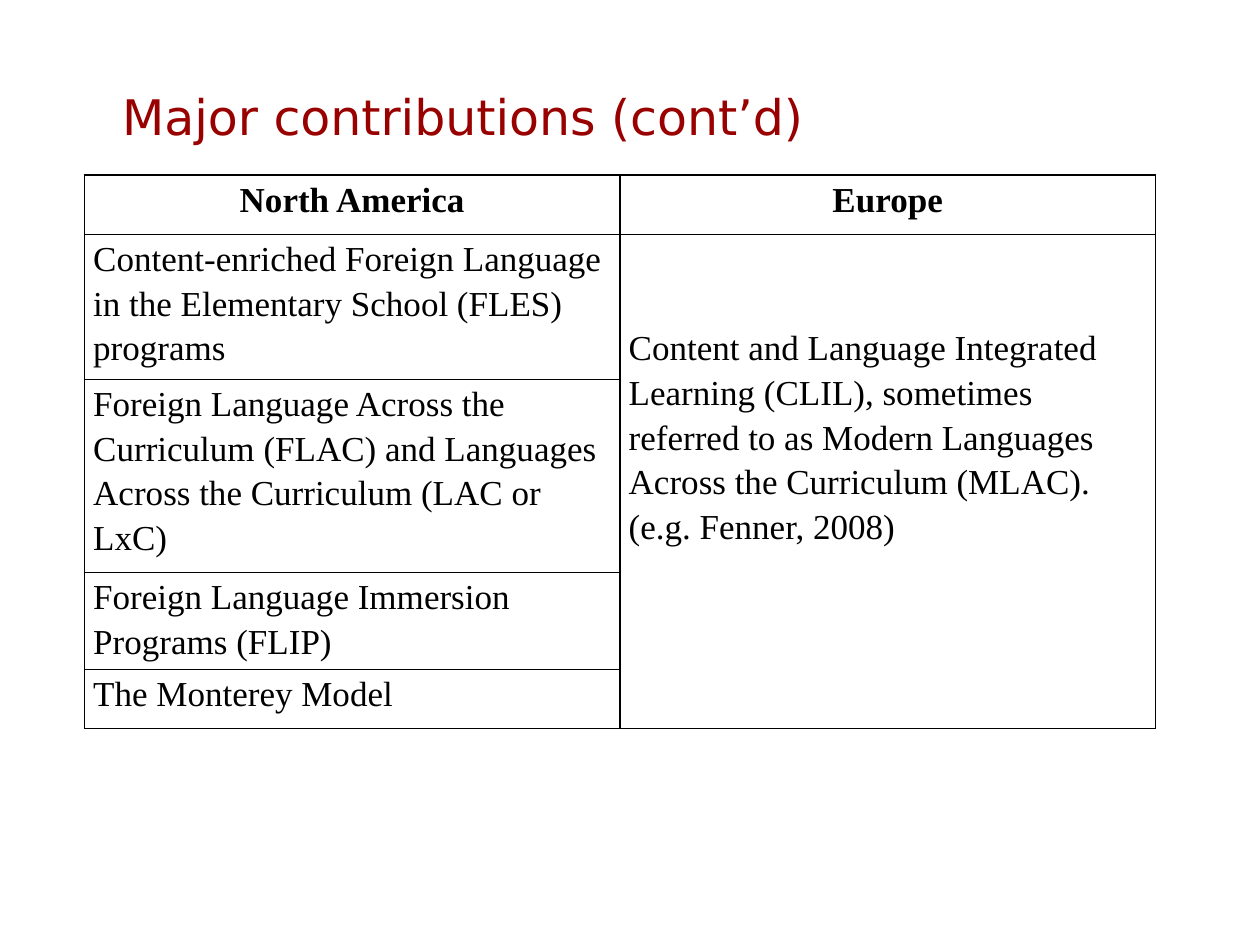
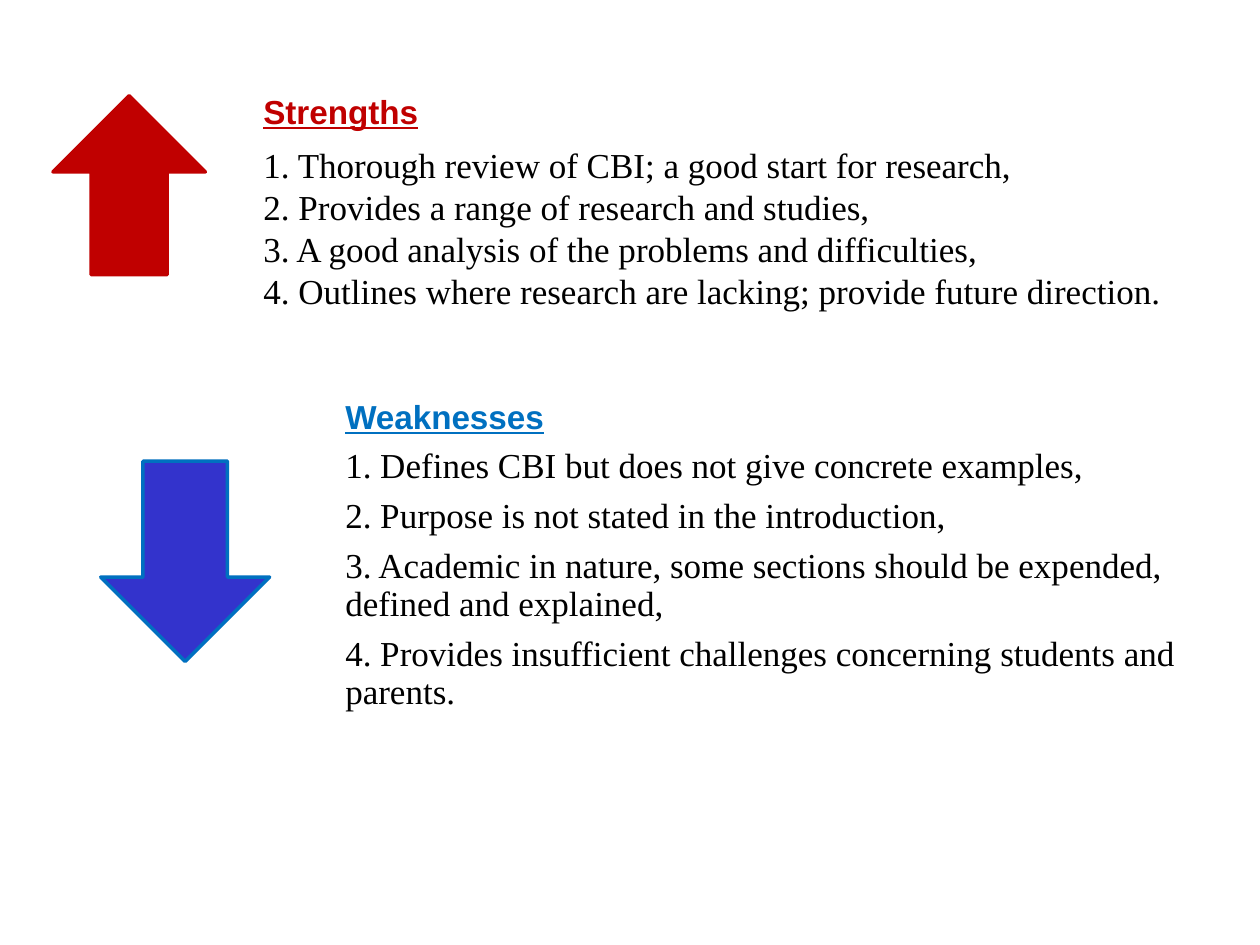
from lxml import etree
from pptx import Presentation
from pptx.dml.color import RGBColor
from pptx.enum.shapes import MSO_SHAPE
from pptx.enum.text import MSO_ANCHOR, PP_ALIGN
from pptx.oxml.ns import qn
from pptx.util import Inches, Pt

UP_ARROW, DOWN_ARROW = MSO_SHAPE.UP_ARROW, MSO_SHAPE.DOWN_ARROW
TOP, MIDDLE = MSO_ANCHOR.TOP, MSO_ANCHOR.MIDDLE
LEFT, CENTER = PP_ALIGN.LEFT, PP_ALIGN.CENTER

BLACK, DARK_RED, RED, BLUE, INDIGO = "000000", "990000", "C00000", "0070C0", "3333CC"
SERIF, SANS, TITLE_FONT = "Times New Roman", "Arial", "DejaVu Sans"


def color(value):
    return RGBColor.from_string(value)


def write(para, text, size, name, value, bold=False, underline=False):
    span = para.add_run()
    span.text = text
    span.font.size = Pt(size)
    span.font.name = name
    span.font.color.rgb = color(value)
    span.font.bold = bold
    span.font.underline = underline


deck = Presentation()
deck.slide_width, deck.slide_height = Inches(10), Inches(7.5)
blank = deck.slide_layouts[6]

page = deck.slides.add_slide(blank)
title = page.shapes.add_textbox(Inches(0.75), Inches(0.42), Inches(7.17), Inches(1))
frame = title.text_frame
frame.word_wrap = True
frame.vertical_anchor = MIDDLE
frame.margin_left = Inches(0.22)
write(frame.paragraphs[0], "Major contributions (cont’d)", 28, TITLE_FONT, DARK_RED)

row_heights = [0.47, 1.06, 1.42, 0.71, 0.47]
north_america = [
    "North America",
    "Content-enriched Foreign Language in the Elementary School (FLES) programs",
    "Foreign Language Across the Curriculum (FLAC) and Languages Across the Curriculum (LAC or LxC)",
    "Foreign Language Immersion Programs (FLIP)",
    "The Monterey Model",
]
europe = [
    "Europe",
    "Content and Language Integrated Learning (CLIL), sometimes referred to as "
    "Modern Languages Across the Curriculum (MLAC). (e.g. Fenner, 2008)",
]
table = page.shapes.add_table(
    len(row_heights), 2, Inches(0.67), Inches(1.39), Inches(8.5), Inches(sum(row_heights))
).table
table.first_row = table.horz_banding = False
for column in table.columns:
    column.width = Inches(4.25)
for row, height in zip(table.rows, row_heights):
    row.height = Inches(height)
table.cell(1, 1).merge(table.cell(4, 1))

for cell in table.iter_cells():
    cell.margin_left = cell.margin_right = Inches(0.07)
    cell.margin_top = cell.margin_bottom = 0
    properties = cell._tc.get_or_add_tcPr()
    for side in ("a:lnL", "a:lnR", "a:lnT", "a:lnB"):
        border = etree.SubElement(properties, qn(side), w=str(Pt(1)))
        fill = etree.SubElement(border, qn("a:solidFill"))
        etree.SubElement(fill, qn("a:srgbClr"), val=BLACK)
    cell.fill.background()

for column_index, entries in enumerate((north_america, europe)):
    for row_index, entry in enumerate(entries):
        heading = row_index == 0
        para = table.cell(row_index, column_index).text_frame.paragraphs[0]
        para.alignment = CENTER if heading else LEFT
        para.line_spacing = 1.15
        write(para, entry, 20, SERIF, BLACK, bold=heading)
table.cell(1, 1).margin_top = Inches(0.71)

strengths = [
    "1. Thorough review of CBI; a good start for research,",
    "2. Provides a range of research and studies,",
    "3. A good analysis of the problems and difficulties,",
    "4. Outlines where research are lacking; provide future direction.",
]
weaknesses = [
    "1. Defines CBI but does not give concrete examples,",
    "2. Purpose is not stated in the introduction,",
    "3. Academic in nature, some sections should be expended, defined and explained,",
    "4. Provides insufficient challenges concerning students and parents.",
]
sections = [
    ("Strengths", strengths, RED, RED, UP_ARROW, (0.42, 0.76, 1.21, 1.42),
     (1.94, 0.76, 7.55, 2.06), TOP, 1.0, 0),
    ("Weaknesses", weaknesses, BLUE, INDIGO, DOWN_ARROW, (0.8, 3.66, 1.34, 1.59),
     (2.59, 3.13, 6.91, 2.72), MIDDLE, 0.9, 7),
]

page = deck.slides.add_slide(blank)
for heading, points, accent, filling, kind, arrow_place, text_place, anchor, spacing, gap in sections:
    arrow = page.shapes.add_shape(kind, *map(Inches, arrow_place))
    arrow.shadow.inherit = False
    arrow.fill.solid()
    arrow.fill.fore_color.rgb = color(filling)
    arrow.line.color.rgb = color(accent)
    arrow.line.width = Pt(2)
    etree.SubElement(arrow.line._get_or_add_ln(), qn("a:round"))

    box = page.shapes.add_textbox(*map(Inches, text_place))
    frame = box.text_frame
    frame.word_wrap = True
    frame.vertical_anchor = anchor
    frame.margin_left = frame.margin_right = frame.margin_bottom = Inches(0.15)
    frame.margin_top = 0
    para = frame.paragraphs[0]
    para.line_spacing = 0.9
    para.space_after = Pt(7)
    write(para, heading, 19, SANS, accent, bold=True, underline=True)
    for point in points:
        para = frame.add_paragraph()
        para.line_spacing = spacing
        para.space_after = Pt(gap)
        write(para, point, 20, SERIF, BLACK)

deck.save("out.pptx")
